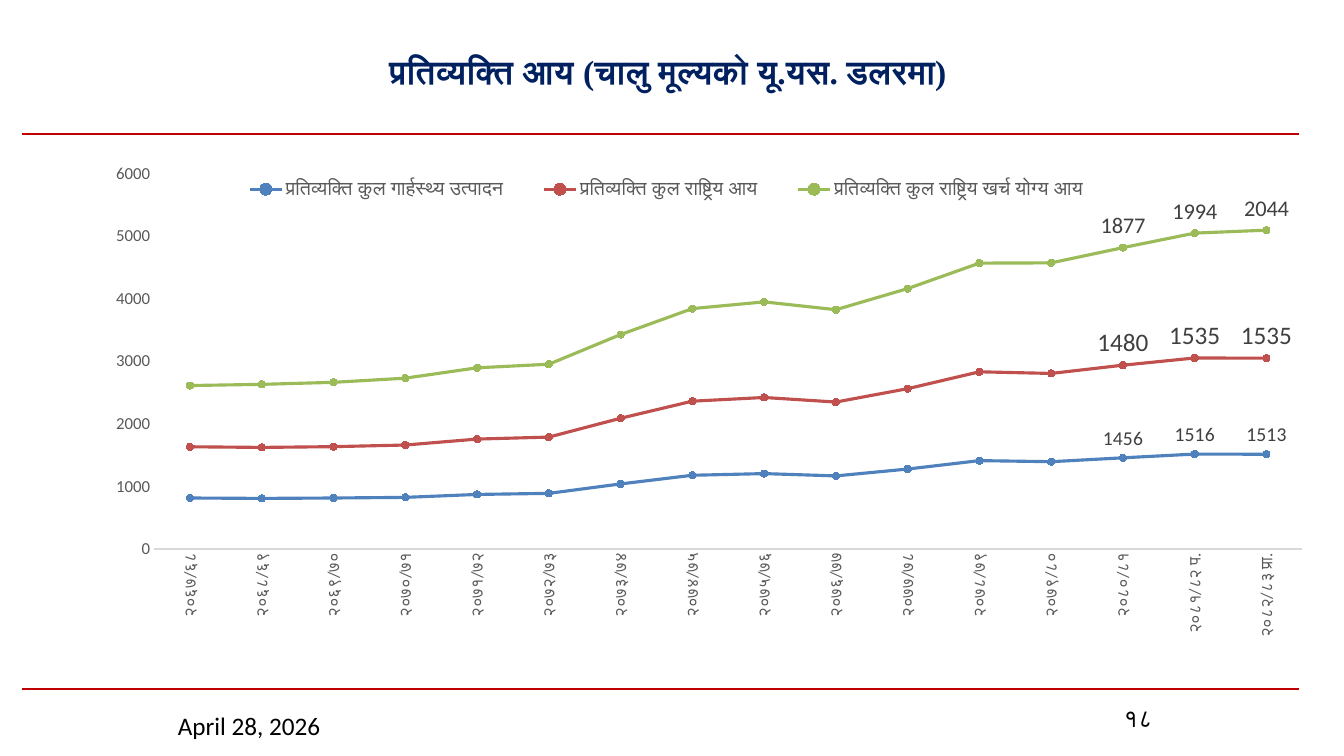
from lxml.etree import SubElement
from pptx import Presentation
from pptx.chart.data import CategoryChartData as Data
from pptx.dml.color import RGBColor
from pptx.enum.chart import XL_CHART_TYPE as Kind, XL_LABEL_POSITION as Spot
from pptx.enum.chart import XL_LEGEND_POSITION as Side, XL_MARKER_STYLE as Mark
from pptx.enum.chart import XL_TICK_MARK as Tick
from pptx.enum.shapes import MSO_CONNECTOR as Conn
from pptx.enum.text import MSO_ANCHOR as Anchor, PP_ALIGN as Align
from pptx.oxml import parse_xml
from pptx.oxml.ns import nsdecls, qn
from pptx.util import Pt

PX = 9525
NAVY = RGBColor(0x00, 0x20, 0x60)
RED = RGBColor(0xC0, 0x00, 0x00)
BLACK = RGBColor(0x00, 0x00, 0x00)
DARK = RGBColor(0x40, 0x40, 0x40)
GRAY = RGBColor(0x59, 0x59, 0x59)
PALE = RGBColor(0xD9, 0xD9, 0xD9)
BLUE = RGBColor(0x4F, 0x81, 0xBD)
BRICK = RGBColor(0xC0, 0x50, 0x4D)
GREEN = RGBColor(0x9B, 0xBB, 0x59)

YEARS = ["२०६७/६८", "२०६८/६९", "२०६९/७०", "२०७०/७१", "२०७१/७२", "२०७२/७३",
         "२०७३/७४", "२०७४/७५", "२०७५/७६", "२०७६/७७", "२०७७/७८", "२०७८/७९",
         "२०७९/८०", "२०८०/८१", "२०८१/८२ प.", "२०८२/८३ प्रा."]
SERIES = [
    ("प्रतिव्यक्ति कुल गार्हस्थ्य उत्पादन", BLUE, 14,
     [814, 808, 814, 824, 871, 888, 1039, 1177,
      1204, 1167, 1277, 1411, 1394, 1456, 1516, 1513]),
    ("प्रतिव्यक्ति कुल राष्ट्रिय आय", BRICK, 18,
     [818, 814, 820, 836, 884, 899, 1049, 1184,
      1216, 1180, 1284, 1419, 1410, 1480, 1535, 1535]),
    ("प्रतिव्यक्ति कुल राष्ट्रिय खर्च योग्य आय", GREEN, 16,
     [979, 1008, 1028, 1069, 1139, 1164, 1337, 1479,
      1527, 1475, 1598, 1736, 1766, 1877, 1994, 2044]),
]


def scale(*box):
    """Turn px lengths into EMU."""
    return [n * PX for n in box]


def style(font, size, color, name="Calibri", bold=False):
    """Set size, face and colour of a font."""
    for key, val in {"size": Pt(size), "name": name, "bold": bold}.items():
        setattr(font, key, val)
    font.color.rgb = color


def write(slide, box, text, align=Align.LEFT, anchor=Anchor.TOP, **look):
    """Add one line of text in a box."""
    frame = slide.shapes.add_textbox(*scale(*box)).text_frame
    frame.word_wrap = True
    frame.vertical_anchor = anchor
    para = frame.paragraphs[0]
    para.alignment = align
    run = para.add_run()
    run.text = text
    style(run.font, **look)


def rule(slide, x, y, w):
    """Draw a level red line."""
    line = slide.shapes.add_connector(Conn.STRAIGHT, *scale(x, y, x + w, y))
    line.line.color.rgb = RED
    line.line.width = Pt(1.5)
    SubElement(line._element.spPr, qn("a:effectLst"))


def place(node, index, inner, **box):
    """Fix a chart part at fractions of the chart."""
    for old in node.findall(qn("c:layout")):
        node.remove(old)
    target = '<c:layoutTarget val="inner"/>' if inner else ""
    modes = "".join(f'<c:{k}Mode val="edge"/>' for k in "xy")
    sizes = "".join(f'<c:{k} val="{v}"/>' for k, v in box.items())
    node.insert(index, parse_xml(
        f'<c:layout {nsdecls("c")}><c:manualLayout>{target}{modes}{sizes}'
        '</c:manualLayout></c:layout>'))


def paint(line, color, size, last):
    """Style one series and label its last points."""
    line.smooth = False
    line.format.line.color.rgb = color
    line.format.line.width = Pt(2.25)
    mark = line.marker
    mark.style, mark.size = Mark.CIRCLE, 5
    mark.format.fill.solid()
    mark.format.fill.fore_color.rgb = color
    mark.format.line.color.rgb = color
    for i in last:
        label = line.points[i].data_label
        style(label.font, size, DARK)
        label.position = Spot.ABOVE


def graph(slide, box):
    """Add the stacked line chart of income per head."""
    data = Data(number_format="0")
    data.categories = YEARS
    for name, _, _, vals in SERIES:
        data.add_series(name, vals)
    chart = slide.shapes.add_chart(
        Kind.LINE_MARKERS_STACKED, *scale(*box), data).chart
    style(chart.font, 10, BLACK)
    chart.has_title = False
    chart.plots[0].vary_by_categories = False
    cat, val = chart.category_axis, chart.value_axis
    for axis in (cat, val):
        axis.has_major_gridlines = False
        axis.major_tick_mark = axis.minor_tick_mark = Tick.NONE
        style(axis.tick_labels.font, 12, GRAY)
    cat.format.line.color.rgb = PALE
    cat.format.line.width = Pt(0.75)
    val.format.line.fill.background()
    val.minimum_scale, val.maximum_scale, val.major_unit = 0, 6000, 1000
    val.tick_labels.number_format = "0"
    val.tick_labels.number_format_is_linked = False
    chart.has_legend = True
    chart.legend.position = Side.BOTTOM
    chart.legend.include_in_layout = False
    style(chart.legend.font, 14, GRAY)
    root = chart.element
    body = root.xpath(".//c:catAx/c:txPr/a:bodyPr")[0]
    body.set("rot", "-5400000")
    body.set("vert", "horz")
    place(root.xpath(".//c:plotArea")[0], 0, True, x=0.05, y=0.04, w=0.93, h=0.71)
    place(root.xpath(".//c:legend")[0], 1, False, x=0.1, y=0.04, w=0.73, h=0.06)
    last = range(len(YEARS) - 3, len(YEARS))
    for line, (_, color, size, _) in zip(chart.plots[0].series, SERIES):
        paint(line, color, size, last)


def foot(slide, x, y):
    """Add the date and the page number."""
    write(slide, (x, y + 8, 208, 39), "April 28, 2026", size=18, color=BLACK)
    write(slide, (x + 896, y, 56, 46), "१८", Align.CENTER,
          size=18, color=BLACK, name="Roboto")


def main():
    """Build and save the slide."""
    deck = Presentation()
    deck.slide_width, deck.slide_height = scale(1280, 720)
    slide = deck.slides.add_slide(deck.slide_layouts[6])
    for y in (128, 656):
        rule(slide, 21, y, 1216)
    write(slide, (208, 18, 864, 99), "प्रतिव्यक्ति आय (चालु मूल्यको यू.यस. डलरमा) ",
          Align.CENTER, Anchor.MIDDLE, size=24, color=NAVY,
          name="Times New Roman", bold=True)
    graph(slide, (88, 145, 1176, 504))
    foot(slide, 160, 664)
    deck.save("out.pptx")


if __name__ == "__main__":
    main()
